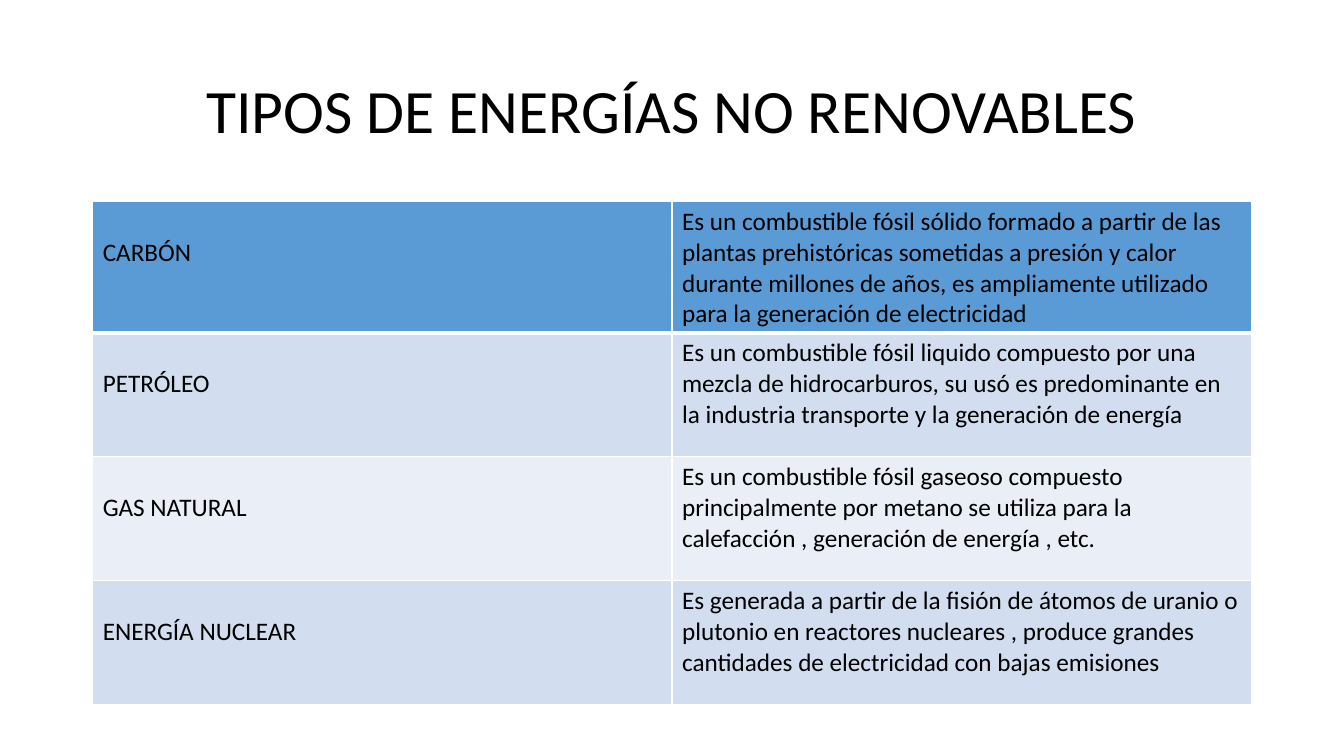
from pptx import Presentation
from pptx.dml.color import RGBColor
from pptx.enum.text import MSO_ANCHOR as ANCHOR, PP_ALIGN as ALIGN
from pptx.oxml import parse_xml
from pptx.oxml.ns import nsdecls
from pptx.util import Inches, Pt

BLACK = RGBColor(0x00, 0x00, 0x00)
WHITE = RGBColor(0xFF, 0xFF, 0xFF)
BLUE = RGBColor(0x5B, 0x9B, 0xD5)
BAND_DARK = RGBColor(0xD2, 0xDE, 0xEF)
BAND_LIGHT = RGBColor(0xEA, 0xEF, 0xF7)

COLS, ROWS = 58, 75
LEFT, WIDTH = 4, 50

ENERGIES = [
    ("CARBÓN", "Es un combustible fósil sólido formado a partir de las plantas "
     "prehistóricas sometidas a presión y calor durante millones de años, es "
     "ampliamente utilizado para la generación de electricidad"),
    ("PETRÓLEO", "Es un combustible fósil liquido compuesto por una mezcla de "
     "hidrocarburos, su usó es predominante en la industria transporte y la "
     "generación de energía"),
    ("GAS NATURAL", "Es un combustible fósil gaseoso compuesto principalmente por "
     "metano se utiliza para la calefacción , generación de energía , etc."),
    ("ENERGÍA NUCLEAR", "Es generada a partir de la fisión de átomos de uranio o "
     "plutonio en reactores nucleares , produce grandes cantidades de "
     "electricidad con bajas emisiones"),
]


class Deck:
    font = {"name": "Calibri", "bold": False}

    def __init__(self, prs):
        self.w, self.h = prs.slide_width, prs.slide_height
        self.s = prs.slides.add_slide(prs.slide_layouts[6])

    def x(self, cols):
        return round(self.w * cols / COLS)

    def y(self, rows):
        return round(self.h * rows / ROWS)

    def text(self, tf, text, size, **para):
        tf.word_wrap = True
        p = tf.paragraphs[0]
        for key, value in para.items():
            setattr(p, key, value)
        r = p.add_run()
        r.text = text
        for key, value in {**self.font, "size": Pt(size)}.items():
            setattr(r.font, key, value)
        r.font.color.rgb = BLACK

    def title(self, text, left, top, width, height):
        sp = self.s.shapes.add_textbox(self.x(left), self.y(top),
                                       self.x(width), self.y(height))
        sp.text_frame.vertical_anchor = ANCHOR.MIDDLE
        self.text(sp.text_frame, text, 44, alignment=ALIGN.CENTER, line_spacing=0.9)

    def borders(self, cell, **widths):
        for side, width in widths.items():
            cell._tc.get_or_add_tcPr().append(parse_xml(
                f'<a:ln{side} {nsdecls("a")} w="{Pt(width)}"><a:solidFill>'
                f'<a:srgbClr val="{WHITE}"/></a:solidFill></a:ln{side}>'))

    def table(self, data, fills, left, top, width, row_height):
        tbl = self.s.shapes.add_table(
            len(data), len(data[0]), self.x(left), self.y(top),
            self.x(width), self.y(row_height * len(data))).table
        for i, (texts, fill) in enumerate(zip(data, fills)):
            for j, text in enumerate(texts):
                cell = tbl.cell(i, j)
                self.borders(cell, L=1, R=1, T=3 if i == 1 else 1, B=3 if i == 0 else 1)
                cell.fill.solid()
                cell.fill.fore_color.rgb = fill
                cell.margin_top = Inches(0.05 if j else 0.36)
                self.text(cell.text_frame, text, 18)


def main():
    prs = Presentation()
    prs.slide_width, prs.slide_height = Inches(13.33), Inches(7.5)
    deck = Deck(prs)
    deck.title("TIPOS DE ENERGÍAS NO RENOVABLES", LEFT, 4, WIDTH, 14.5)
    deck.table(ENERGIES, [BLUE, BAND_DARK, BAND_LIGHT, BAND_DARK], LEFT, 20, WIDTH, 12.3)
    prs.save("out.pptx")


if __name__ == "__main__":
    main()
